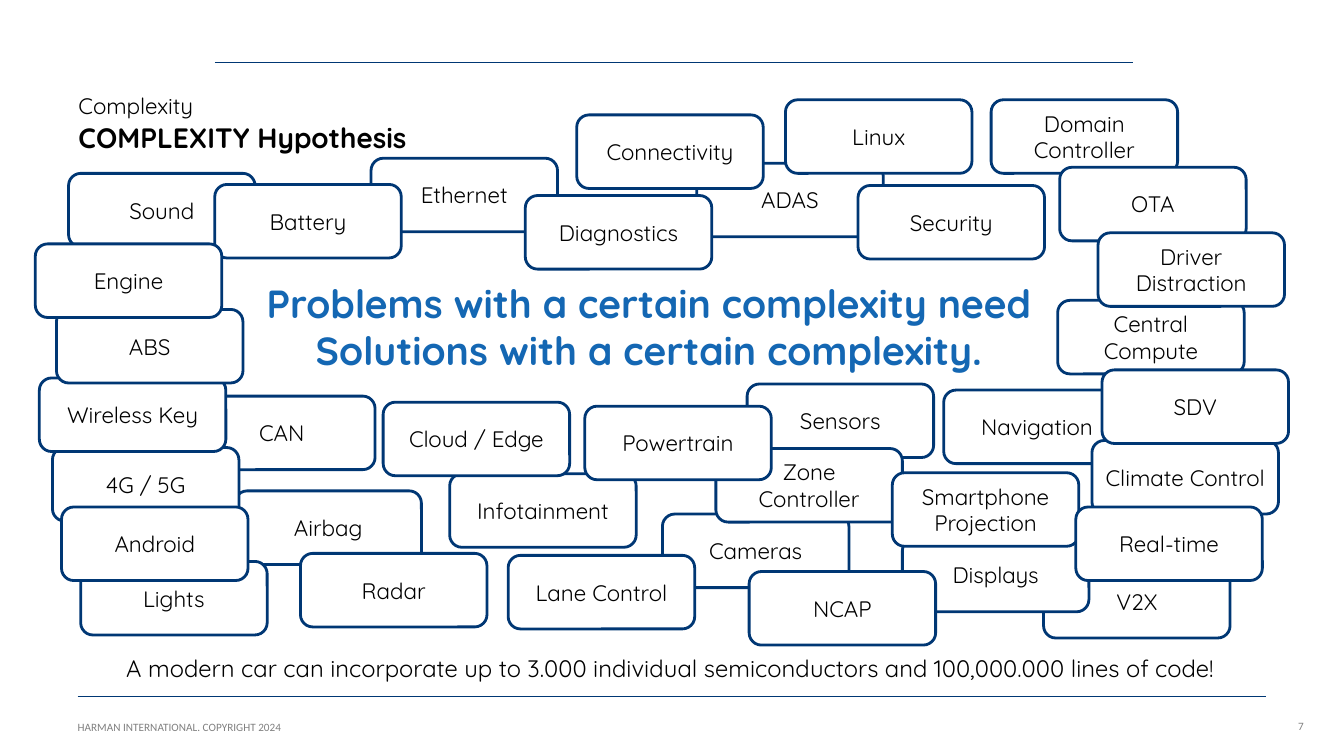
import pptx
import pptx.util
import pptx.dml.color
import pptx.enum.shapes
import pptx.enum.text
from lxml import etree

Inches = pptx.util.Inches
Pt = pptx.util.Pt
ALIGN = pptx.enum.text.PP_ALIGN
ANCHOR = pptx.enum.text.MSO_ANCHOR

COLORS = {"navy": "003774", "blue": "1467B3", "black": "000000",
          "gray": "808080", "white": "FFFFFF"}
BOX_W, BOX_H = 1.85, 0.73

# Topic boxes from back to front: label, left, top
TOPICS = [
    ("CAN", 1.87, 3.93), ("Airbag", 2.33, 4.87), ("4G / 5G", 0.52, 4.44),
    ("V2X", 10.35, 5.6), ("Infotainment", 4.46, 4.7),
    ("Ethernet", 3.68, 1.57), ("Sound", 0.68, 1.72), ("ADAS", 6.91, 1.62),
    ("Cameras", 6.57, 5.1), ("Sensors", 7.41, 3.81),
    ("Wireless Key", 0.39, 3.75), ("Lights", 0.8, 5.57),
    ("Radar", 2.98, 5.49), ("Lane Control", 5.04, 5.51),
    ("Connectivity", 5.72, 1.14), ("Battery", 2.13, 1.83),
    ("Central Compute", 10.49, 2.98), ("Zone Controller", 7.1, 4.45),
    ("Domain Controller", 9.83, 0.99), ("Security", 8.51, 1.84),
    ("Displays", 8.95, 5.34), ("Navigation", 9.36, 3.87),
    ("Cloud / Edge", 3.8, 3.99), ("Smartphone Projection", 8.85, 4.69),
    ("Powertrain", 5.8, 4.03), ("OTA", 10.51, 1.66),
    ("Climate Control", 10.83, 4.37), ("Diagnostics", 5.21, 1.94),
    ("Linux", 7.79, 0.99), ("Android", 0.61, 5.03),
    ("Driver Distraction", 10.89, 2.31), ("SDV", 10.93, 3.67),
    ("ABS", 0.56, 3.07), ("Engine", 0.35, 2.42),
    ("Real-time", 10.67, 5.03), ("NCAP", 7.43, 5.67),
]


def rgb(name):
    return pptx.dml.color.RGBColor.from_string(COLORS[name])


def write(frame, text, size=16, font="Quicksand", color="black", bold=False,
          align=ALIGN.LEFT, anchor=ANCHOR.TOP, wrap=True, inset=None, after=0):
    """Fill a text frame, one paragraph per line of text."""
    frame.word_wrap = wrap
    frame.vertical_anchor = anchor
    if inset is not None:
        frame.margin_left = frame.margin_right = Inches(inset)
        frame.margin_top = frame.margin_bottom = Inches(inset)
    frame.text = text
    for para in frame.paragraphs:
        para.alignment = align
        para.space_after = Pt(after)
        for run in para.runs:
            run.font.name = font
            run.font.size = Pt(size)
            run.font.bold = bold
            run.font.color.rgb = rgb(color)


class Canvas:
    def __init__(self, slide, line="navy", fill="white"):
        self.shapes = slide.shapes
        self.line = line
        self.fill = fill

    def text(self, text, left, top, width, height, **style):
        box = self.shapes.add_textbox(
            Inches(left), Inches(top), Inches(width), Inches(height))
        write(box.text_frame, text, **style)

    def rule(self, left, right, top):
        """Draw a thin horizontal line."""
        line = self.shapes.add_connector(
            pptx.enum.shapes.MSO_CONNECTOR.STRAIGHT,
            Inches(left), Inches(top), Inches(right), Inches(top))
        line.line.color.rgb = rgb(self.line)
        line.line.width = Pt(0.75)
        props = line._element.spPr
        etree.SubElement(props, pptx.oxml.ns.qn("a:effectLst"))

    def topic(self, label, left, top):
        box = self.shapes.add_shape(
            pptx.enum.shapes.MSO_SHAPE.ROUNDED_RECTANGLE,
            Inches(left), Inches(top), Inches(BOX_W), Inches(BOX_H))
        box.shadow.inherit = False
        box.fill.solid()
        box.fill.fore_color.rgb = rgb(self.fill)
        box.line.color.rgb = rgb(self.line)
        box.line.width = Pt(2)
        write(box.text_frame, label, align=ALIGN.CENTER, anchor=ANCHOR.MIDDLE)


def main():
    deck = pptx.Presentation()
    deck.slide_width = Inches(13.33)
    deck.slide_height = Inches(7.5)
    page = Canvas(deck.slides.add_slide(deck.slide_layouts[6]))

    small = dict(size=8, font="Calibri", color="gray", inset=0)
    page.text("7", 12.24, 7.14, 0.69, 0.15, align=ALIGN.RIGHT, **small)
    page.text("HARMAN INTERNATIONAL. COPYRIGHT 2024",
              0.77, 7.15, 4.95, 0.15, **small)
    page.rule(0.77, 12.56, 6.91)
    page.rule(2.13, 11.24, 0.62)

    page.text("Complexity", 0.68, 0.86, 3.59, 0.45, after=6)
    page.text("COMPLEXITY Hypothesis", 0.68, 1.15, 10.74, 0.53,
              size=20, bold=True, after=6)
    page.text("Problems with a certain complexity need\n"
              "Solutions with a certain complexity.",
              2.44, 2.72, 7.99, 1.04, size=28, color="blue", bold=True,
              align=ALIGN.CENTER, wrap=False)
    for label, left, top in TOPICS:
        page.topic(label, left, top)
    page.text("A modern car can incorporate up to 3.000 individual "
              "semiconductors and 100,000.000 lines of code!",
              0.28, 6.44, 12.74, 0.39, size=17, align=ALIGN.CENTER)

    deck.save("out.pptx")


if __name__ == "__main__":
    main()
